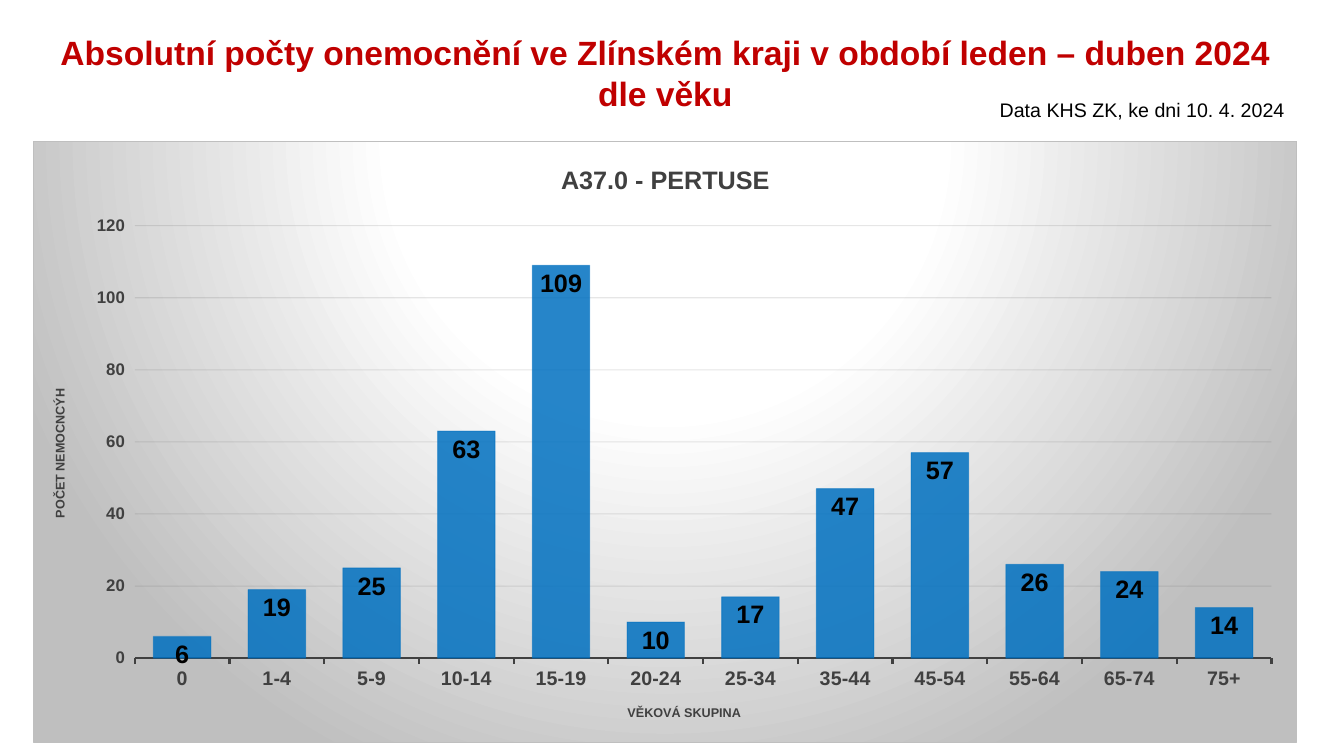
from lxml import etree
from pptx import Presentation
from pptx.chart import data as chart_data
from pptx.dml import color
from pptx.enum import chart as chart_enum, text
from pptx.oxml import ns, parse_xml
from pptx.util import Pt

FACE = "Arial"
GREY = "404040"
BLUE = "0070C0"
CASES = {
    "0": 6, "1-4": 19, "5-9": 25, "10-14": 63, "15-19": 109, "20-24": 10,
    "25-34": 17, "35-44": 47, "45-54": 57, "55-64": 26, "65-74": 24, "75+": 14,
}


def rgb(value):
    return color.RGBColor.from_string(value)


def style(font, size, value, bold=False):
    font.name = FACE
    font.size = Pt(size)
    font.bold = bold
    font.color.rgb = rgb(value)


def fade(element, query, percent):
    for tint in element.xpath(query):
        alpha = etree.SubElement(tint, ns.qn("a:alpha"))
        alpha.set("val", str(percent * 1000))


def label(title, wording, size):
    title.text_frame.text = wording
    style(title.text_frame.paragraphs[0].font, size, GREY, True)


def add_heading(slide, left, top, width, height):
    heading = slide.shapes.title
    heading.left, heading.top = Pt(left), Pt(top)
    heading.width, heading.height = Pt(width), Pt(height)
    frame = heading.text_frame
    frame.text = ("Absolutní počty onemocnění ve Zlínském kraji v období leden – duben 2024\n"
                  "dle věku")
    frame.word_wrap = True
    frame.auto_size = text.MSO_AUTO_SIZE.SHAPE_TO_FIT_TEXT
    frame.vertical_anchor = text.MSO_ANCHOR.TOP
    for line in frame.paragraphs:
        line.alignment = text.PP_ALIGN.CENTER
        style(line.font, 24, "C00000", True)


def add_data_date(slide, left, top, width, height):
    data_date = slide.shapes.add_textbox(Pt(left), Pt(top), Pt(width), Pt(height))
    frame = data_date.text_frame
    frame.text = "Data KHS ZK, ke dni 10. 4. 2024"
    frame.word_wrap = False
    frame.auto_size = text.MSO_AUTO_SIZE.SHAPE_TO_FIT_TEXT
    style(frame.paragraphs[0].font, 14, "000000")


def add_background(chart):
    stops = "".join(
        f'<a:gs pos="{position * 1000}"><a:srgbClr val="{value}"/></a:gs>'
        for position, value in ((0, "FFFFFF"), (39, "FFFFFF"), (100, "BFBFBF")))
    background = parse_xml(
        f'<c:spPr {ns.nsdecls("c", "a")}><a:gradFill><a:gsLst>{stops}</a:gsLst>'
        '<a:path path="circle"><a:fillToRect l="50000" t="-80000" r="50000" b="180000"/>'
        '</a:path></a:gradFill><a:ln w="9525"><a:solidFill><a:srgbClr val="BFBFBF"/>'
        '</a:solidFill></a:ln></c:spPr>')
    chart._chartSpace.find(ns.qn("c:chart")).addnext(background)


def place_plot(chart, x, y, w, h):
    area = chart._chartSpace.xpath("c:chart/c:plotArea")[0]
    for automatic in area.findall(ns.qn("c:layout")):
        area.remove(automatic)
    sizes = "".join(f'<c:{side} val="{share}"/>'
                    for side, share in zip("xywh", (x, y, w, h)))
    area.insert(0, parse_xml(
        f'<c:layout {ns.nsdecls("c")}><c:manualLayout><c:layoutTarget val="inner"/>'
        f'<c:xMode val="edge"/><c:yMode val="edge"/>{sizes}</c:manualLayout></c:layout>'))


def format_axes(ages, counts):
    for axis, wording, size in ((ages, "VĚKOVÁ SKUPINA", 14),
                                (counts, "POČET NEMOCNCÝH", 12)):
        label(axis.axis_title, wording, 9)
        style(axis.tick_labels.font, size, GREY, True)
        axis.major_tick_mark = chart_enum.XL_TICK_MARK.OUTSIDE
    ages.format.line.color.rgb = rgb(GREY)
    ages.format.line.width = Pt(1.5)
    counts.format.line.fill.background()
    counts.minimum_scale, counts.maximum_scale, counts.major_unit = 0, 120, 20
    turned = counts.axis_title.text_frame._txBody.bodyPr
    turned.set("rot", "-5400000")
    turned.set("vert", "horz")
    grid = counts.major_gridlines.format.line
    grid.color.rgb = rgb("0D0D0D")
    grid.width = Pt(0.75)
    fade(counts._element, "c:majorGridlines//a:srgbClr", 10)


def format_bars(plot):
    plot.gap_width = 65
    plot.vary_by_categories = False
    bars = plot.series[0]
    bars.format.fill.solid()
    bars.format.fill.fore_color.rgb = rgb(BLUE)
    bars.format.line.color.rgb = rgb(BLUE)
    bars.format.line.width = Pt(0.75)
    fade(bars._element, "c:spPr/a:solidFill/a:srgbClr", 85)
    fade(bars._element, "c:spPr/a:ln//a:srgbClr", 50)
    values = bars.data_labels
    values.show_value = True
    values.position = chart_enum.XL_LABEL_POSITION.INSIDE_END
    style(values.font, 18, "000000", True)


def add_age_chart(slide, left, top, width, height):
    cases = chart_data.CategoryChartData()
    cases.categories = list(CASES)
    cases.add_series("Series 1", list(CASES.values()))
    chart = slide.shapes.add_chart(
        chart_enum.XL_CHART_TYPE.COLUMN_CLUSTERED,
        Pt(left), Pt(top), Pt(width), Pt(height), cases).chart
    chart.font.name = "Calibri"
    chart.font.size = Pt(10)
    chart.font.color.rgb = rgb("000000")
    chart.has_legend = False
    label(chart.chart_title, "A37.0 - PERTUSE", 18)
    chart.chart_title.include_in_layout = False
    add_background(chart)
    place_plot(chart, 0.08, 0.14, 0.9, 0.72)
    format_axes(chart.category_axis, chart.value_axis)
    format_bars(chart.plots[0])


def main():
    deck = Presentation()
    deck.slide_width, deck.slide_height = Pt(960), Pt(540)
    slide = deck.slides.add_slide(deck.slide_layouts[5])
    margin, width = 23.75, 902.9
    add_heading(slide, margin, 19.4, width, 65.5)
    add_data_date(slide, 707, 66.2, 218.9, 24.5)
    add_age_chart(slide, margin, 100.8, width, 429.8)
    deck.save("out.pptx")


if __name__ == "__main__":
    main()
